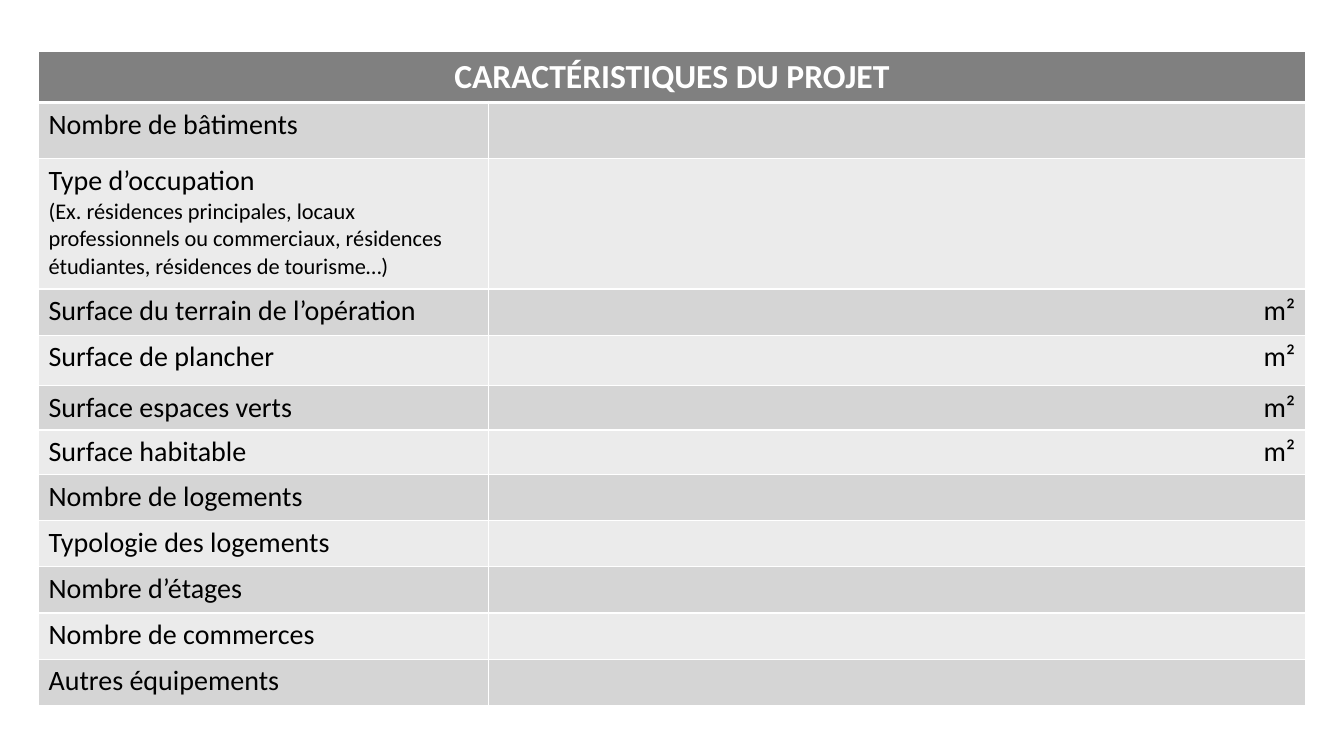
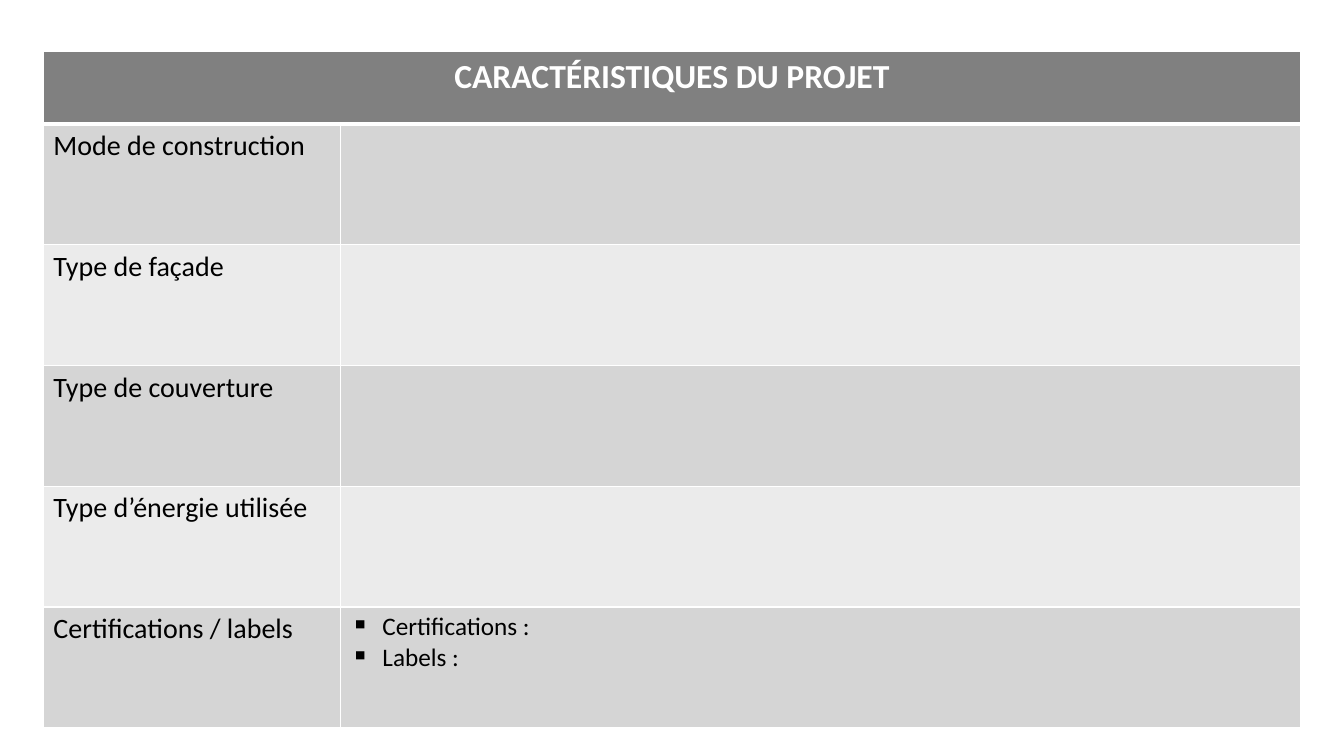
from dataclasses import dataclass

from pptx import Presentation
from pptx.dml.color import RGBColor as RGB
from pptx.enum.text import PP_ALIGN as Align
from pptx.oxml.ns import qn
from pptx.util import Pt
from lxml.etree import SubElement


@dataclass(frozen=True)
class Theme:
    font: str = "Calibri"
    header_fill: str = "808080"
    bands: tuple = ("D5D5D5", "EBEBEB")
    border: str = "FFFFFF"
    header_text: str = "FFFFFF"
    text: str = "000000"
    header_size: float = 24
    label_size: float = 20
    list_size: float = 18
    hint_size: float = 16
    thin: float = 1
    thick: float = 3


THEME = Theme()
SLIDE_WIDTH, SLIDE_HEIGHT = 960, 540
TABLE_TOP = 36.7
BULLET, BULLET_INDENT = "▪", 22.5
HEADING = "CARACTÉRISTIQUES DU PROJET"
AREA_UNIT = "m²"

# Each row: label, hint below the label, value, height
PROGRAMME_ROWS = [
    ("Nombre de bâtiments", "", "", 40.2),
    ("Type d’occupation",
     "(Ex. résidences principales, locaux professionnels ou commerciaux, "
     "résidences étudiantes, résidences de tourisme…)", "", 93),
    ("Surface du terrain de l’opération", "", AREA_UNIT, 33),
    ("Surface de plancher", "", AREA_UNIT, 36),
    ("Surface espaces verts", "", AREA_UNIT, 30),
    ("Surface habitable", "", AREA_UNIT, 30),
] + [(label, "", "", 33) for label in (
    "Nombre de logements", "Typologie des logements", "Nombre d’étages",
    "Nombre de commerces", "Autres équipements")]

CONSTRUCTION_ROWS = [(label, "", value, 86.3) for label, value in (
    ("Mode de construction", ""),
    ("Type de façade", ""),
    ("Type de couverture", ""),
    ("Type d’énergie utilisée", ""),
    ("Certifications / labels", ["Certifications :", "Labels :"]),
)]


def set_borders(cell, top, bottom):
    """Draw the four borders; call before the fill, which must follow them."""
    props = cell._tc.get_or_add_tcPr()
    for side, width in (("L", THEME.thin), ("R", THEME.thin),
                        ("T", top), ("B", bottom)):
        line = SubElement(props, qn(f"a:ln{side}"), w=str(Pt(width)))
        fill = SubElement(line, qn("a:solidFill"))
        SubElement(fill, qn("a:srgbClr"), val=THEME.border)


def paint(cell, color, top=THEME.thin, bottom=THEME.thin):
    set_borders(cell, top, bottom)
    cell.fill.solid()
    cell.fill.fore_color.rgb = RGB.from_string(color)


def style(paragraph, size, color=THEME.text, bold=False, align=Align.LEFT):
    paragraph.alignment = align
    for run in paragraph.runs:
        run.font.name = THEME.font
        run.font.size = Pt(size)
        run.font.bold = bold
        run.font.color.rgb = RGB.from_string(color)


def add_bullet(paragraph):
    props = paragraph._p.get_or_add_pPr()
    props.set("marL", str(Pt(BULLET_INDENT)))
    props.set("indent", str(-Pt(BULLET_INDENT)))
    SubElement(props, qn("a:buChar"), char=BULLET)


def write_label(cell, label, hint):
    cell.text_frame.text = label
    style(cell.text_frame.paragraphs[0], THEME.label_size)
    if hint:
        hint_line = cell.text_frame.add_paragraph()
        hint_line.text = hint
        style(hint_line, THEME.hint_size)


def write_value(cell, value):
    """Write a list as bullets, and a unit against the right edge."""
    if isinstance(value, list):
        cell.text_frame.text = "\n".join(value)
        for item in cell.text_frame.paragraphs:
            add_bullet(item)
            style(item, THEME.list_size)
    elif value:
        cell.text_frame.text = value
        style(cell.text_frame.paragraphs[0], THEME.label_size,
              align=Align.RIGHT)


def write_header(table):
    for cell in table.rows[0].cells:
        paint(cell, THEME.header_fill, bottom=THEME.thick)
    heading = table.cell(0, 0)
    heading.merge(table.cell(0, 1))
    heading.text_frame.text = HEADING
    style(heading.text_frame.paragraphs[0], THEME.header_size,
          THEME.header_text, bold=True, align=Align.CENTER)


def add_form_slide(deck, rows, column_widths, header_height):
    """Add a slide with one form table, centred across the slide."""
    slide = deck.slides.add_slide(deck.slide_layouts[6])
    heights = [header_height] + [row[-1] for row in rows]
    width = sum(column_widths)
    table = slide.shapes.add_table(
        len(heights), len(column_widths), Pt((SLIDE_WIDTH - width) / 2),
        Pt(TABLE_TOP), Pt(width), Pt(sum(heights))).table
    table.horz_banding = False
    for column, column_width in zip(table.columns, column_widths):
        column.width = Pt(column_width)
    for row, height in zip(table.rows, heights):
        row.height = Pt(height)

    write_header(table)
    for index, (label, hint, value, _) in enumerate(rows):
        label_cell, value_cell = table.rows[index + 1].cells
        for cell in (label_cell, value_cell):
            paint(cell, THEME.bands[index % 2],
                  top=THEME.thin if index else THEME.thick)
        write_label(label_cell, label, hint)
        write_value(value_cell, value)


def main():
    deck = Presentation()
    deck.slide_width, deck.slide_height = Pt(SLIDE_WIDTH), Pt(SLIDE_HEIGHT)
    add_form_slide(deck, PROGRAMME_ROWS, (321.5, 583.5), 33)
    add_form_slide(deck, CONSTRUCTION_ROWS, (212.5, 685.5), 51.7)
    deck.save("out.pptx")


if __name__ == "__main__":
    main()
